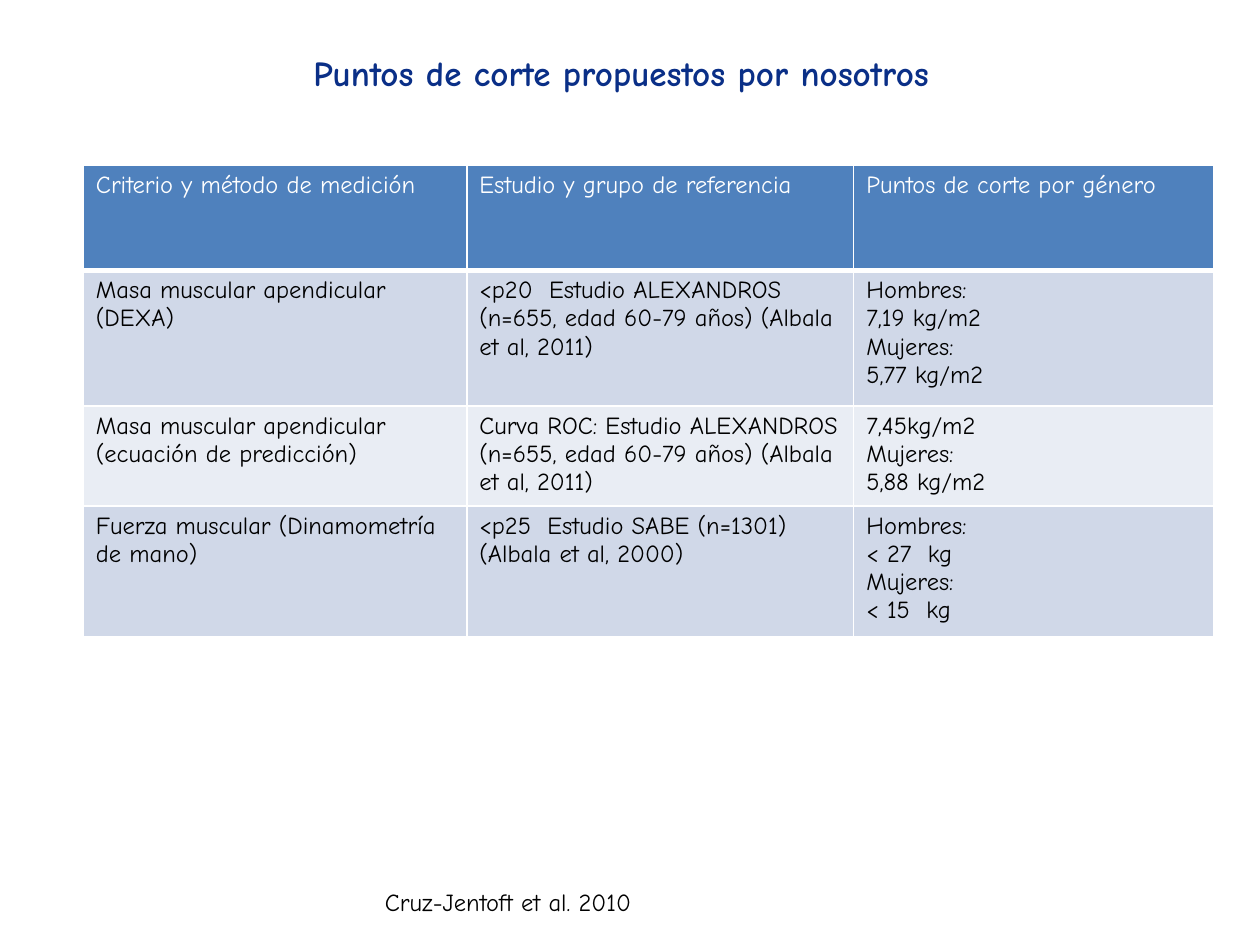
from dataclasses import dataclass

from lxml.etree import SubElement
from pptx import Presentation
from pptx.dml.color import RGBColor as RGB
from pptx.enum.text import MSO_ANCHOR as Anchor, PP_ALIGN as Align
from pptx.oxml.ns import qn
from pptx.util import Cm, Pt


@dataclass(frozen=True)
class Theme:
    font: str = "Comic Neue"
    title_size: int = 20
    body_size: int = 14
    title: str = "0A2F87"
    text: str = "000000"
    white: str = "FFFFFF"
    header: str = "4F81BD"
    bands: tuple = ("D0D8E8", "E9EDF4")
    border: float = 1
    header_border: float = 3


class SlideBuilder:
    def __init__(self, prs, theme):
        self.theme = theme
        self.s = prs.slides.add_slide(prs.slide_layouts[5])

    def set_text(self, tf, text, color, size, bold=False, align=Align.LEFT):
        tf.text = text
        for p in tf.paragraphs:
            p.alignment = align
            p.font.name = self.theme.font
            p.font.size = Pt(size)
            p.font.bold = bold
            p.font.color.rgb = RGB.from_string(color)

    def title(self, text, x, y, w, h):
        sp = self.s.shapes.title
        sp.left, sp.top, sp.width, sp.height = Cm(x), Cm(y), Cm(w), Cm(h)
        sp.text_frame.vertical_anchor = Anchor.TOP
        self.set_text(sp.text_frame, text, self.theme.title,
                      self.theme.title_size, True, Align.CENTER)

    def text(self, text, x, y, w, h):
        sp = self.s.shapes.add_textbox(Cm(x), Cm(y), Cm(w), Cm(h))
        sp.text_frame.word_wrap = False
        sp.text_frame.vertical_anchor = Anchor.BOTTOM
        self.set_text(sp.text_frame, text, self.theme.text, self.theme.body_size)

    def borders(self, cell, is_header):
        """Draw the cell edges; they must precede the fill in the XML."""
        tc_pr = cell._tc.get_or_add_tcPr()
        for side in ("lnL", "lnR", "lnT", "lnB"):
            thick = is_header and side == "lnB"
            width = self.theme.header_border if thick else self.theme.border
            ln = SubElement(tc_pr, qn(f"a:{side}"), w=str(Pt(width)))
            fill = SubElement(ln, qn("a:solidFill"))
            SubElement(fill, qn("a:srgbClr"), val=self.theme.white)

    def table(self, rows, x, y, widths, heights):
        t = self.theme
        table = self.s.shapes.add_table(
            len(rows), len(widths), Cm(x), Cm(y),
            Cm(sum(widths)), Cm(sum(heights))).table
        for column, width in zip(table.columns, widths):
            column.width = Cm(width)
        for i, (row, height) in enumerate(zip(rows, heights)):
            table.rows[i].height = Cm(height)
            is_header = i == 0
            fill = t.header if is_header else t.bands[(i - 1) % 2]
            for cell, text in zip(table.rows[i].cells, row):
                self.borders(cell, is_header)
                cell.fill.solid()
                cell.fill.fore_color.rgb = RGB.from_string(fill)
                self.set_text(cell.text_frame, text,
                              t.white if is_header else t.text, t.body_size)


CUTOFFS = [
    ("Criterio y método de medición", "Estudio y grupo de referencia",
     "Puntos de corte por género"),
    ("Masa muscular apendicular (DEXA)",
     "<p20  Estudio ALEXANDROS (n=655, edad 60-79 años) (Albala et al, 2011)",
     "Hombres:\n7,19 kg/m2\nMujeres:\n5,77 kg/m2"),
    ("Masa muscular apendicular (ecuación de predicción)",
     "Curva ROC: Estudio ALEXANDROS (n=655, edad 60-79 años) (Albala et al, 2011)",
     "7,45kg/m2\nMujeres:\n5,88 kg/m2"),
    ("Fuerza muscular (Dinamometría de mano)",
     "<p25  Estudio SABE (n=1301) (Albala et al, 2000)",
     "Hombres:\n< 27  kg\nMujeres:\n< 15  kg"),
]


def main():
    prs = Presentation()
    prs.slide_width, prs.slide_height = Cm(25.4), Cm(19.05)
    slide = SlideBuilder(prs, Theme())
    slide.title("Puntos de corte propuestos por nosotros", 2.1, 0.92, 20.85, 1.8)
    slide.table(CUTOFFS, 1.68, 3.33, widths=(7.73, 7.8, 7.26),
                heights=(2.12, 2.73, 2.02, 2.64))
    slide.text("Cruz-Jentoft et al. 2010", 7.51, 17.58, 5.5, 1.02)
    prs.save("out.pptx")


if __name__ == "__main__":
    main()
